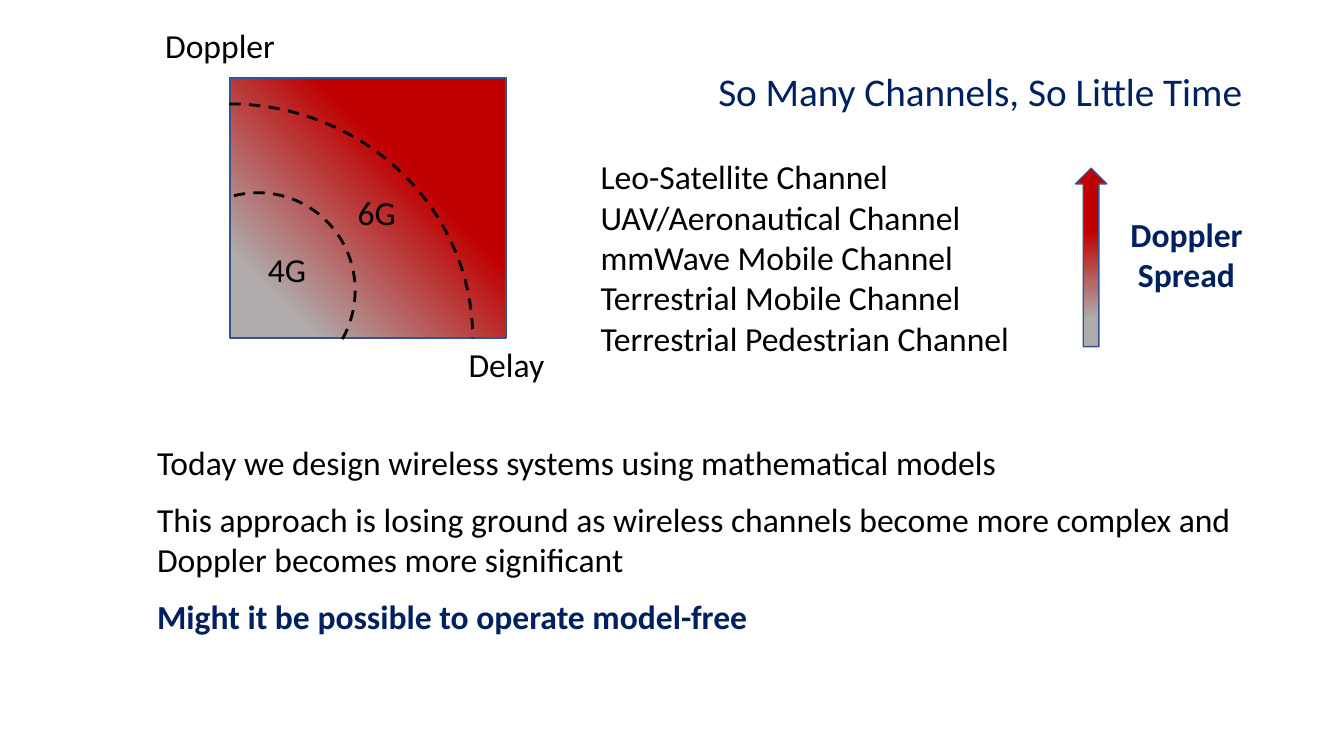
from dataclasses import dataclass

from pptx import Presentation
from pptx.dml.color import RGBColor
from pptx.enum.dml import MSO_LINE_DASH_STYLE as Dash
from pptx.enum.shapes import MSO_SHAPE as Shape
from pptx.enum.text import MSO_ANCHOR as Anchor, PP_ALIGN as Align
from pptx.util import Pt


@dataclass(frozen=True)
class Theme:
    font: str = "Calibri"
    title_size: int = 28
    body_size: int = 24
    ink: str = "000000"
    navy: str = "002060"
    outline: str = "325491"
    spread: tuple = ((0.16, "AFABAB"), (0.65, "C00000"))


class SlideBuilder:
    def __init__(self, slide, theme):
        self.slide = slide
        self.theme = theme

    def text(self, box, lines, size=None, color=None, bold=False,
             align=Align.LEFT, anchor=Anchor.TOP, gap=0, spacing=1.0):
        """Add a text box; each line is a string or (string, color, bold)."""
        frame = self.slide.shapes.add_textbox(*map(Pt, box)).text_frame
        frame.word_wrap = True
        frame.vertical_anchor = anchor
        for index, line in enumerate(lines):
            if isinstance(line, str):
                line = (line, color or self.theme.ink, bold)
            words, line_color, line_bold = line
            paragraph = frame.paragraphs[0] if index == 0 else frame.add_paragraph()
            paragraph.alignment = align
            paragraph.line_spacing = spacing
            paragraph.space_before = Pt(gap if index else 0)
            run = paragraph.add_run()
            run.text = words
            run.font.name = self.theme.font
            run.font.size = Pt(size or self.theme.body_size)
            run.font.bold = line_bold
            run.font.color.rgb = RGBColor.from_string(line_color)

    def shape(self, kind, box, line_color, line_width):
        shape = self.slide.shapes.add_shape(kind, *map(Pt, box))
        shape.shadow.inherit = False
        shape.line.color.rgb = RGBColor.from_string(line_color)
        shape.line.width = Pt(line_width)
        return shape

    def gradient(self, kind, box, angle):
        shape = self.shape(kind, box, self.theme.outline, 1)
        shape.fill.gradient()
        shape.fill.gradient_angle = angle
        for stop, (position, color) in zip(shape.fill.gradient_stops, self.theme.spread):
            stop.position = position
            stop.color.rgb = RGBColor.from_string(color)

    def dashed_arc(self, box, rotation=0, start=None):
        arc = self.shape(Shape.ARC, box, self.theme.ink, 2)
        arc.fill.background()
        arc.line.dash_style = Dash.DASH
        arc.rotation = rotation
        if start is not None:
            arc.adjustments[0] = start


def main():
    presentation = Presentation()
    presentation.slide_width, presentation.slide_height = Pt(960), Pt(540)
    theme = Theme()
    builder = SlideBuilder(
        presentation.slides.add_slide(presentation.slide_layouts[6]), theme)

    # Title
    builder.text((483.8, 28.8, 410.4, 76.3), ["So Many Channels, So Little Time"],
                 size=theme.title_size, color=theme.navy, align=Align.RIGHT,
                 anchor=Anchor.MIDDLE, spacing=0.9)

    # Delay-Doppler plane with the 4G and 6G regions
    builder.gradient(Shape.RECTANGLE, (164.2, 55.6, 197.3, 185.8), angle=45)
    builder.dashed_arc((113.8, 137.5, 139.7, 141.1), rotation=32.8, start=134.16)
    builder.dashed_arc((-10.1, 74.2, 347.8, 334.8))
    for label, box in (
        ("Doppler", (110.9, 14.4, 115.2, 36)),
        ("Delay", (327.6, 241.9, 87.8, 37.4)),
        ("4G", (184.3, 174.2, 54.7, 37.4)),
        ("6G", (248.4, 133.2, 48.2, 36)),
    ):
        builder.text(box, [label])

    # Message
    builder.text((105.1, 311.8, 795.6, 147.6), [
        "Today we design wireless systems using mathematical models",
        "This approach is losing ground as wireless channels become more complex "
        "and Doppler becomes more significant",
        ("Might it be possible to operate model-free", theme.navy, True),
    ], gap=12)

    # Channels ordered by Doppler spread
    builder.text((421.9, 108, 311, 152.6), [
        "Leo-Satellite Channel",
        "UAV/Aeronautical Channel",
        "mmWave Mobile Channel",
        "Terrestrial Mobile Channel",
        "Terrestrial Pedestrian Channel",
    ])
    builder.gradient(Shape.UP_ARROW, (768.2, 120.2, 22.3, 127.4), angle=90)
    builder.text((794.2, 149, 106.6, 65.5), ["Doppler Spread"],
                 color=theme.navy, bold=True, align=Align.CENTER)

    presentation.save("out.pptx")


if __name__ == "__main__":
    main()
